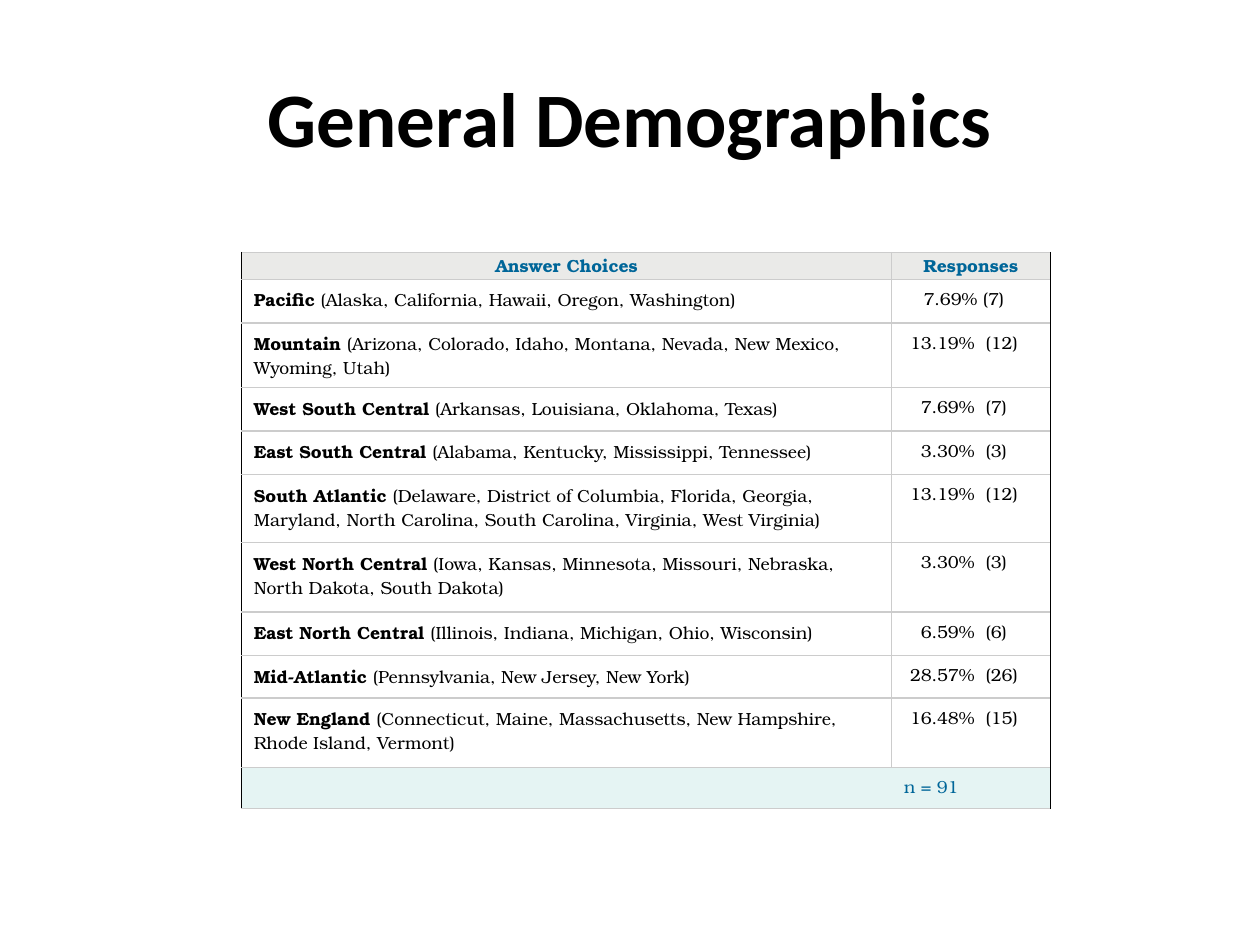
from dataclasses import dataclass
from lxml.etree import SubElement
from pptx import Presentation
from pptx.dml.color import RGBColor
from pptx.enum.text import MSO_ANCHOR, PP_ALIGN
from pptx.oxml.ns import qn
from pptx.util import Cm, Pt


@dataclass
class Theme:
    black: str = "000000"
    blue: str = "006699"
    grey: str = "CCCCCC"
    head: str = "EAEAE8"
    body: str = "FFFFFF"
    foot: str = "E5F4F3"
    sans: str = "Calibri"
    serif: str = "TeX Gyre Bonum"
    big: int = 44
    small: int = 10
    thin: float = 0.25
    line: float = 1


look = Theme()


def style(run, font, size, color, bold=False):
    run.font.name = font
    run.font.size = Pt(size)
    run.font.bold = bold
    run.font.color.rgb = RGBColor.from_string(color)


def edge(cell, side, color, width):
    """Draw one cell border, or hide it when there is no colour."""
    line = SubElement(cell._tc.get_or_add_tcPr(), qn(f"a:ln{side}"), w=str(Pt(width)))
    if color:
        fill = SubElement(line, qn("a:solidFill"))
        SubElement(fill, qn("a:srgbClr"), val=color)
    else:
        SubElement(line, qn("a:noFill"))


# Rows: bold part, plain part, response, height in cm
rows = [
    ("Answer Choices", "", "Responses", 0.55),
    ("Pacific", " (Alaska, California, Hawaii, Oregon, Washington)", "7.69% (7)", 0.88),
    ("Mountain ", "(Arizona, Colorado, Idaho, Montana, Nevada, New Mexico, Wyoming, Utah)",
     "13.19%  (12)", 1.3),
    ("West South Central ", "(Arkansas, Louisiana, Oklahoma, Texas)", "7.69%  (7)", 0.88),
    ("East South Central ", "(Alabama, Kentucky, Mississippi, Tennessee)", "3.30%  (3)", 0.88),
    ("South Atlantic ", "(Delaware, District of Columbia, Florida, Georgia, Maryland, "
     "North Carolina, South Carolina, Virginia, West Virginia)", "13.19%  (12)", 1.37),
    ("West North Central ", "(Iowa, Kansas, Minnesota, Missouri, Nebraska, "
     "North Dakota, South Dakota)", "3.30%  (3)", 1.4),
    ("East North Central ", "(Illinois, Indiana, Michigan, Ohio, Wisconsin)",
     "6.59%  (6)", 0.88),
    ("Mid-Atlantic ", "(Pennsylvania, New Jersey, New York)", "28.57%  (26)", 0.85),
    ("New England ", "(Connecticut, Maine, Massachusetts, New Hampshire, "
     "Rhode Island, Vermont)", "16.48%  (15)", 1.4),
    ("", "", "n = 91", 0.83),
]
last = len(rows) - 1
wide = (13.1, 3.2)

# Slide
deck = Presentation()
deck.slide_width, deck.slide_height = Cm(25.4), Cm(19.05)
slide = deck.slides.add_slide(deck.slide_layouts[6])

# Title
box = slide.shapes.add_textbox(Cm(1.27), Cm(0.76), Cm(22.86), Cm(3.18))
frame = box.text_frame
frame.word_wrap = True
frame.vertical_anchor = MSO_ANCHOR.MIDDLE
frame.text = "General Demographics"
para = frame.paragraphs[0]
para.alignment = PP_ALIGN.CENTER
style(para.runs[0], look.sans, look.big, look.black, True)

# Table grid
high = sum(row[-1] for row in rows)
table = slide.shapes.add_table(len(rows), 2, Cm(4.87), Cm(5.08),
                               Cm(sum(wide)), Cm(high)).table
table.first_row = table.horz_banding = False
for col, width in zip(table.columns, wide):
    col.width = Cm(width)

# Table cells
for i, (name, states, share, tall) in enumerate(rows):
    table.rows[i].height = Cm(tall)
    head, foot = i == 0, i == last
    for j, parts in enumerate([(name, states), (share,)]):
        cell = table.cell(i, j)

        # Text
        para = cell.text_frame.paragraphs[0]
        para.space_after = Pt(14)
        if head or (j == 1 and not foot):
            para.alignment = PP_ALIGN.CENTER
        for k, part in enumerate(parts):
            if part:
                run = para.add_run()
                run.text = part
                style(run, look.serif, look.small,
                      look.blue if head or foot else look.black,
                      head or (j == 0 and k == 0))

        # Margins
        bare = head or not any(parts)
        cell.margin_left = Cm(0 if bare else 0.25)
        cell.margin_right = Cm(0 if bare else 0.53)
        cell.margin_top = cell.margin_bottom = Cm(0 if bare else 0.15)

        # Borders, then fill
        inner = None if foot else look.grey
        edges = {
            "L": (inner, look.line) if j else (look.black, look.thin),
            "R": (look.black, look.thin) if j else (inner, look.line),
            "T": (look.grey, look.thin if head else look.line),
            "B": (look.grey, look.thin if foot else look.line),
        }
        for side, (color, width) in edges.items():
            edge(cell, side, color, width)
        cell.fill.solid()
        tint = look.head if head else look.foot if foot else look.body
        cell.fill.fore_color.rgb = RGBColor.from_string(tint)

deck.save("out.pptx")
